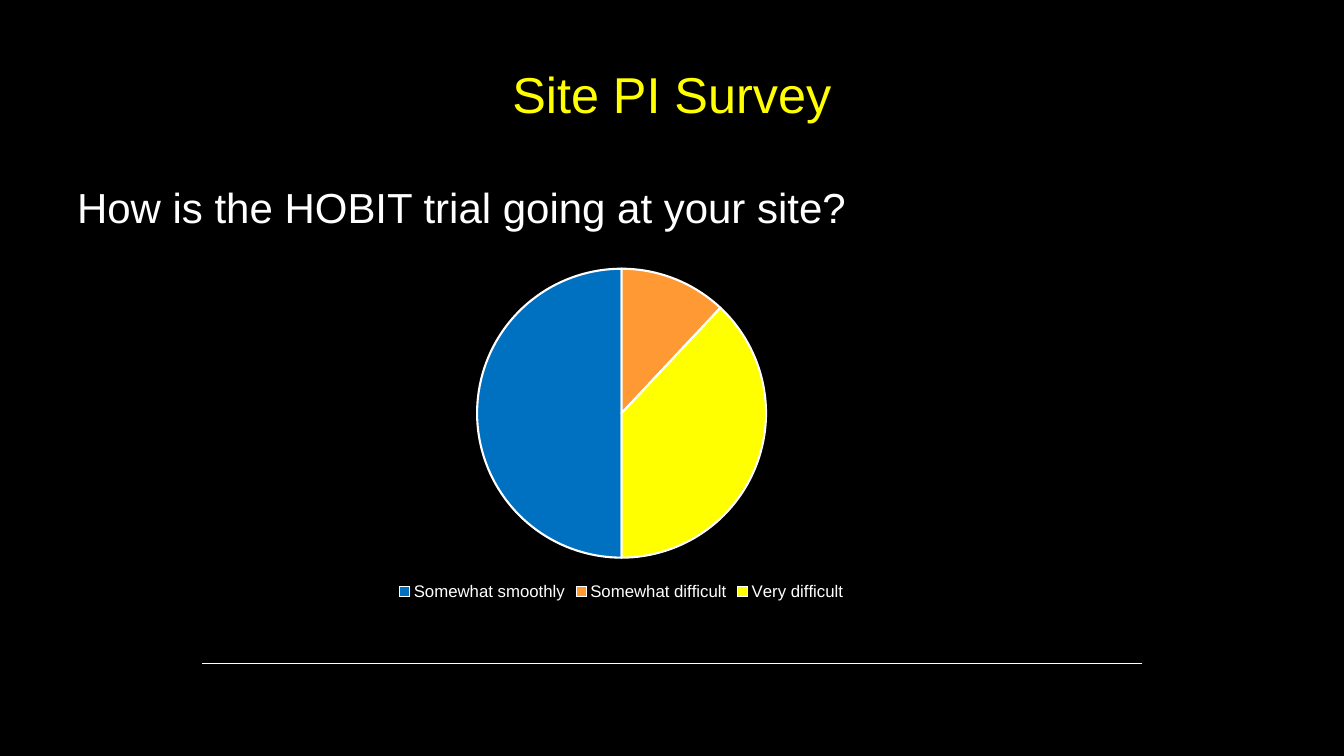
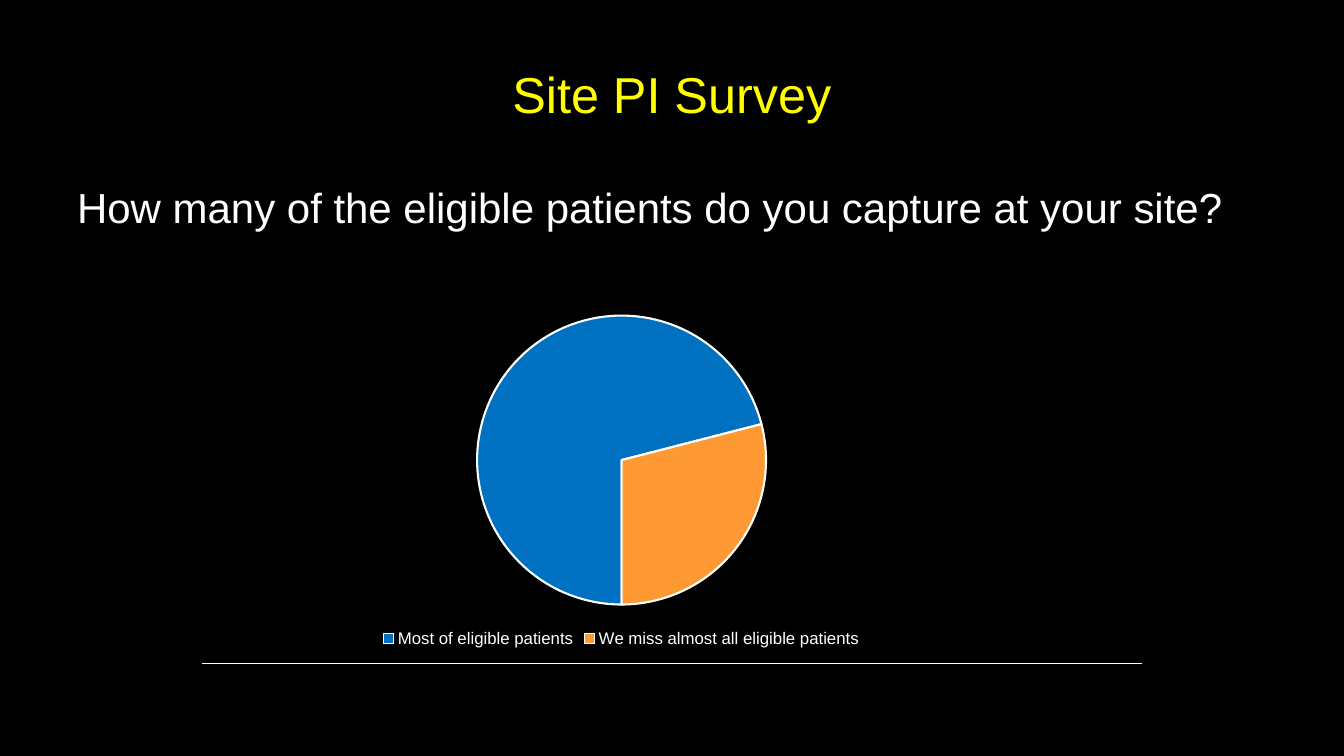
from pptx import Presentation
from pptx.chart.data import CategoryChartData
from pptx.dml.color import RGBColor
from pptx.enum.chart import XL_CHART_TYPE, XL_LEGEND_POSITION
from pptx.enum.shapes import MSO_CONNECTOR
from pptx.enum.text import MSO_ANCHOR, PP_ALIGN
from pptx.oxml.ns import qn
from pptx.util import Pt
from lxml.etree import SubElement

FACE = "Arial"
BLACK, WHITE, YELLOW = "000000", "FFFFFF", "FFFF00"
SLICES = ["0070C0", "FF9933", YELLOW]
WIDTH, HEIGHT = 960, 540
MARGIN = 48
RULE_Y, RULE_INSET = 474, 144
PIE_LEFT, PIE_WIDTH, PIE_HEIGHT = 204, 480, 250

SURVEY = [
    ("How is the HOBIT trial going at your site?", 182,
     {"Somewhat smoothly": 50, "Somewhat difficult": 12, "Very difficult": 38}),
    ("How many of the eligible patients do you capture at your site?", 215.5,
     {"Most of eligible patients": 71, "We miss almost all eligible patients": 29}),
]


def color(code):
    return RGBColor.from_string(code)


def style(font, size, code):
    font.name = FACE
    font.size = Pt(size)
    font.color.rgb = color(code)


def add_text(slide, text, top, height, size, code,
             align=PP_ALIGN.LEFT, anchor=MSO_ANCHOR.TOP):
    box = slide.shapes.add_textbox(
        Pt(MARGIN), Pt(top), Pt(WIDTH - 2 * MARGIN), Pt(height))
    frame = box.text_frame
    frame.word_wrap = True
    frame.vertical_anchor = anchor
    para = frame.paragraphs[0]
    para.alignment = align
    run = para.add_run()
    run.text = text
    style(run.font, size, code)


def add_rule(slide):
    rule = slide.shapes.add_connector(
        MSO_CONNECTOR.STRAIGHT, Pt(WIDTH - RULE_INSET), Pt(RULE_Y),
        Pt(RULE_INSET), Pt(RULE_Y))
    rule.line.color.rgb = color(WHITE)
    rule.line.width = Pt(0.75)
    SubElement(rule.element.spPr, qn("a:effectLst"))


def add_pie(slide, top, votes):
    data = CategoryChartData()
    data.categories = list(votes)
    data.add_series("Series 1", list(votes.values()))
    chart = slide.shapes.add_chart(
        XL_CHART_TYPE.PIE, Pt(PIE_LEFT), Pt(top), Pt(PIE_WIDTH),
        Pt(PIE_HEIGHT), data).chart
    style(chart.font, 10, WHITE)
    chart.has_title = False
    chart.has_legend = True
    chart.legend.position = XL_LEGEND_POSITION.BOTTOM
    chart.legend.include_in_layout = False
    style(chart.legend.font, 12, WHITE)

    plot = chart.plots[0]
    plot.vary_by_categories = True
    for index, code in zip(range(len(votes)), SLICES):
        part = plot.series[0].points[index].format
        part.fill.solid()
        part.fill.fore_color.rgb = color(code)
        part.line.color.rgb = color(WHITE)
        part.line.width = Pt(1.5)
    pie = chart.element.find(".//" + qn("c:pieChart"))
    angle = pie.find(qn("c:firstSliceAng"))
    if angle is None:
        angle = SubElement(pie, qn("c:firstSliceAng"))
    angle.set("val", "180")


def add_slide(deck, title):
    """Add a slide with the shared background, title and rule."""
    slide = deck.slides.add_slide(deck.slide_layouts[6])
    slide.background.fill.solid()
    slide.background.fill.fore_color.rgb = color(BLACK)
    add_text(slide, title, 21.6, 90, 36, YELLOW,
             PP_ALIGN.CENTER, MSO_ANCHOR.MIDDLE)
    add_rule(slide)
    return slide


def main():
    deck = Presentation()
    deck.slide_width, deck.slide_height = Pt(WIDTH), Pt(HEIGHT)
    for question, top, votes in SURVEY:
        slide = add_slide(deck, "Site PI Survey")
        add_text(slide, question, 126, 50, 30, WHITE)
        add_pie(slide, top, votes)
    deck.save("out.pptx")


if __name__ == "__main__":
    main()
